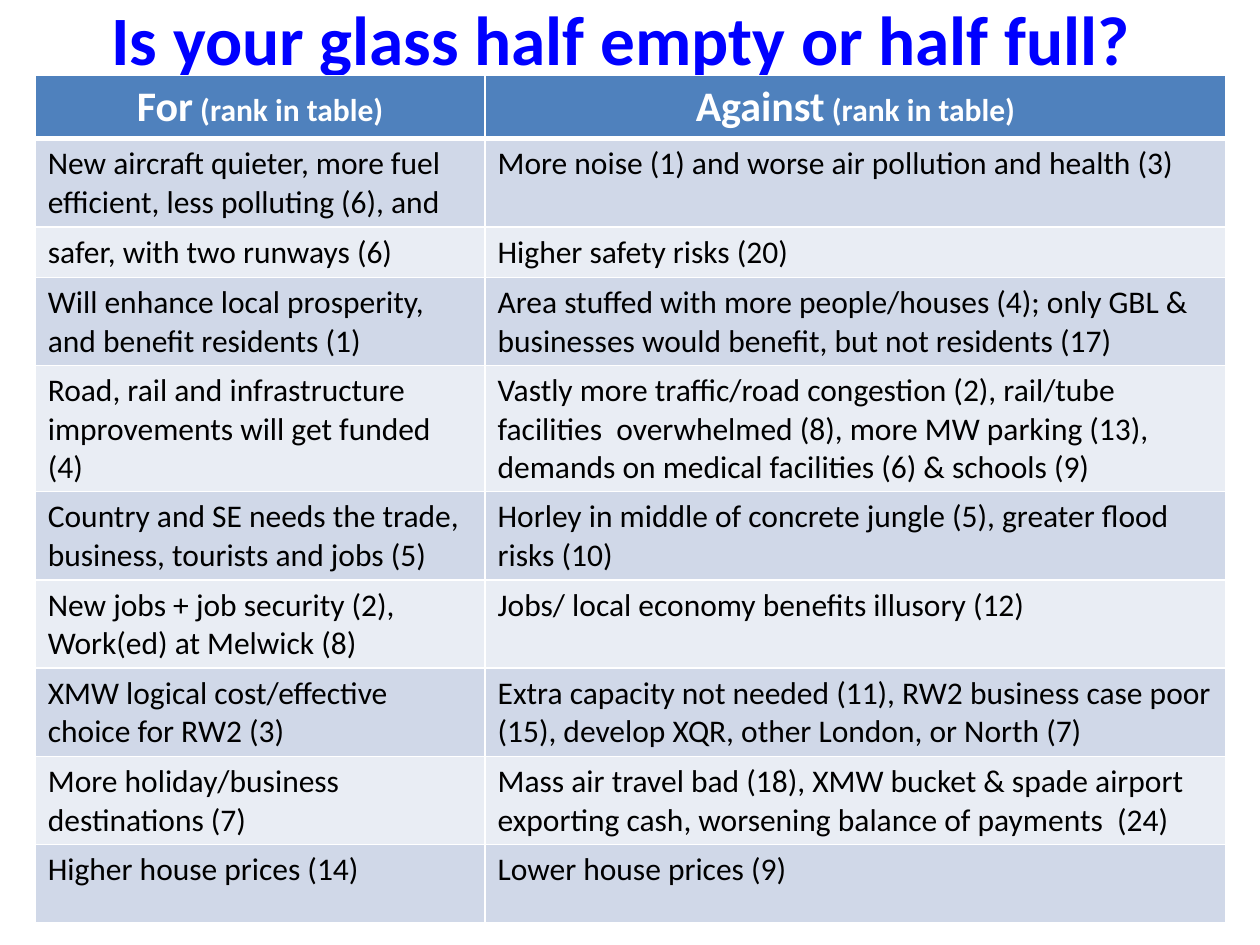
from lxml.etree import SubElement
from pptx import Presentation
from pptx.dml.color import RGBColor
from pptx.enum.text import MSO_ANCHOR as Anchor, PP_ALIGN as Align
from pptx.oxml.ns import qn
from pptx.util import Inches, Pt

BLUE = RGBColor(0x00, 0x00, 0xFF)
WHITE = RGBColor(0xFF, 0xFF, 0xFF)
BLACK = RGBColor(0x00, 0x00, 0x00)
HEADER_FILL = RGBColor(0x4F, 0x81, 0xBD)
BAND_FILLS = (RGBColor(0xD0, 0xD8, 0xE8), RGBColor(0xE9, 0xED, 0xF4))

TITLE_FORMAT = {"name": "Calibri", "size": Pt(39.6), "bold": True}
HEADING_FORMAT = {"name": "Calibri", "size": Pt(24), "bold": True}
NOTE_FORMAT = {"name": "Calibri", "size": Pt(18), "bold": True}
BODY_FORMAT = {"name": "Calibri", "size": Pt(18), "bold": False}

BODY_BORDERS = {"a:lnL": 1, "a:lnR": 1, "a:lnT": 1, "a:lnB": 1}
HEADER_BORDERS = {**BODY_BORDERS, "a:lnB": 3}
FIRST_BORDERS = {**BODY_BORDERS, "a:lnT": 3}

COLUMN_WIDTHS = (3.57, 5.88)
HEADER_HEIGHT = 0.48
HEADINGS = ("For", "Against")
ARGUMENTS = (
    (0.67, "New aircraft quieter, more fuel efficient, less polluting (6), and",
     "More noise (1) and worse air pollution and health (3)"),
    (0.38, "safer, with two runways (6)",
     "Higher safety risks (20)"),
    (0.67, "Will enhance local prosperity, and benefit residents (1)",
     "Area stuffed with more people/houses (4); only GBL & businesses "
     "would benefit, but not residents (17)"),
    (0.96, "Road, rail and infrastructure improvements will get funded (4)",
     "Vastly more traffic/road congestion (2), rail/tube  facilities  "
     "overwhelmed (8), more MW parking (13), demands on medical "
     "facilities (6) & schools (9)"),
    (0.67, "Country and SE needs the trade, business, tourists and jobs (5)",
     "Horley in middle of concrete jungle (5), greater flood risks (10)"),
    (0.67, "New jobs + job security (2), Work(ed) at Melwick (8)",
     "Jobs/ local economy benefits illusory (12)"),
    (0.49, "XMW logical cost/effective choice for RW2 (3)",
     "Extra capacity not needed (11), RW2 business case poor (15), "
     "develop XQR, other London, or North (7)"),
    (0.58, "More holiday/business destinations (7)",
     "Mass air travel bad (18), XMW bucket & spade airport exporting "
     "cash, worsening balance of payments  (24)"),
    (0.62, "Higher house prices (14)", "Lower house prices (9)"),
)


def add_run(paragraph, text, text_format, color):
    run = paragraph.add_run()
    run.text = text
    for name, value in text_format.items():
        setattr(run.font, name, value)
    run.font.color.rgb = color


def add_title(slide, text):
    shape = slide.shapes.add_textbox(Inches(0.43), Inches(0), Inches(9), Inches(0.6))
    frame = shape.text_frame
    frame.word_wrap = True
    frame.vertical_anchor = Anchor.MIDDLE
    paragraph = frame.paragraphs[0]
    paragraph.alignment = Align.CENTER
    add_run(paragraph, text, TITLE_FORMAT, BLUE)


def add_borders(cell, borders):
    properties = cell._tc.get_or_add_tcPr()
    for tag, width in borders.items():
        line = SubElement(properties, qn(tag), w=str(Pt(width)))
        fill = SubElement(line, qn("a:solidFill"))
        SubElement(fill, qn("a:srgbClr"), val=str(WHITE))


def fill_cell(cell, fill, borders, runs, color, alignment):
    add_borders(cell, borders)
    cell.fill.solid()
    cell.fill.fore_color.rgb = fill
    paragraph = cell.text_frame.paragraphs[0]
    paragraph.alignment = alignment
    for text, text_format in runs:
        add_run(paragraph, text, text_format, color)


def add_arguments_table(slide):
    heights = [HEADER_HEIGHT] + [height for height, *_ in ARGUMENTS]
    table = slide.shapes.add_table(
        len(heights), len(COLUMN_WIDTHS), Inches(0.28), Inches(0.6),
        Inches(sum(COLUMN_WIDTHS)), Inches(sum(heights))).table
    for column, width in zip(table.columns, COLUMN_WIDTHS):
        column.width = Inches(width)
    for row, height in zip(table.rows, heights):
        row.height = Inches(height)
    for cell, heading in zip(table.rows[0].cells, HEADINGS):
        runs = [(heading, HEADING_FORMAT), (" (rank in table)", NOTE_FORMAT)]
        fill_cell(cell, HEADER_FILL, HEADER_BORDERS, runs, WHITE, Align.CENTER)
    for index, (_, *texts) in enumerate(ARGUMENTS):
        borders = BODY_BORDERS if index else FIRST_BORDERS
        for cell, text in zip(table.rows[index + 1].cells, texts):
            fill_cell(cell, BAND_FILLS[index % 2], borders,
                      [(text, BODY_FORMAT)], BLACK, Align.LEFT)


def main():
    presentation = Presentation()
    presentation.slide_width = Inches(10)
    presentation.slide_height = Inches(7.5)
    slide = presentation.slides.add_slide(presentation.slide_layouts[6])
    add_title(slide, "Is your glass half empty or half full?")
    add_arguments_table(slide)
    presentation.save("out.pptx")


if __name__ == "__main__":
    main()
